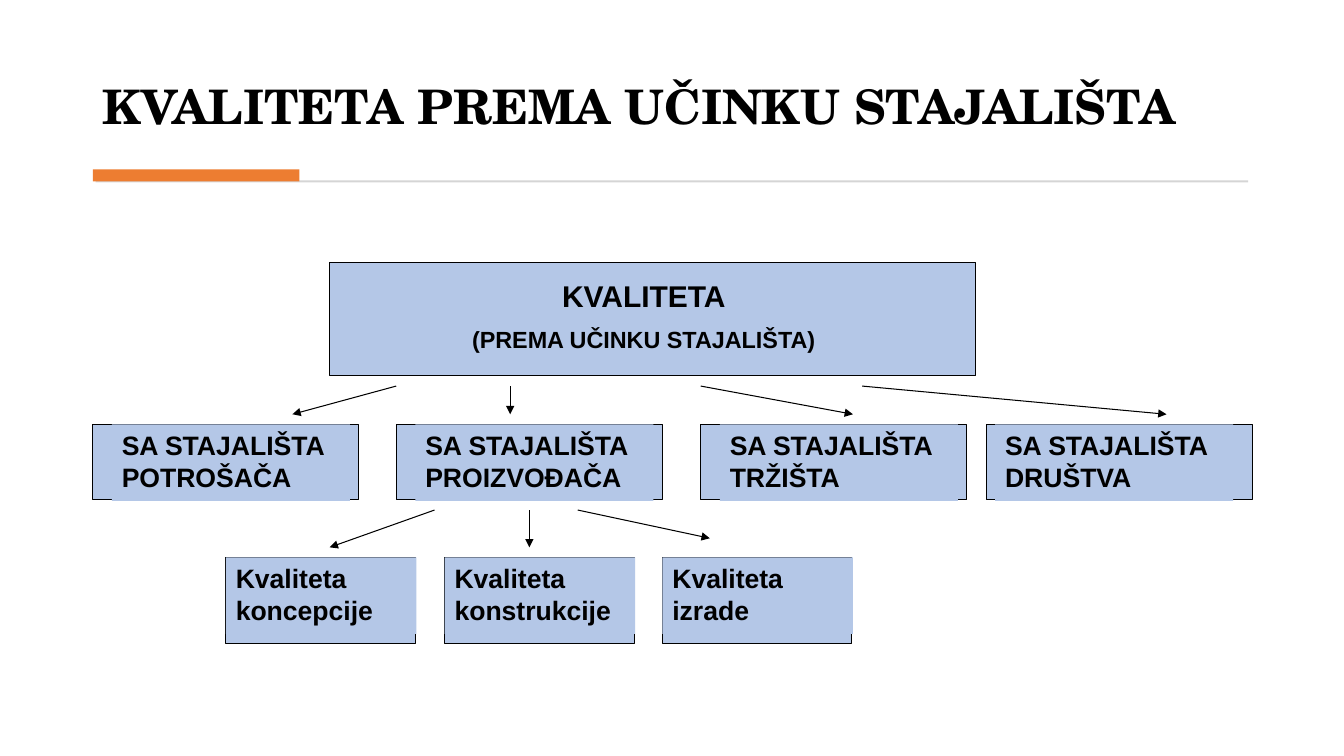
from lxml.etree import SubElement
from pptx import Presentation
from pptx.dml.color import RGBColor
from pptx.enum.shapes import MSO_CONNECTOR, MSO_SHAPE
from pptx.enum.text import MSO_ANCHOR, PP_ALIGN
from pptx.oxml.ns import qn
from pptx.util import Inches, Pt

COLORS = {"ink": "000000", "box": "B4C7E7", "rule": "D5D5D5", "accent": "ED7D31"}
VIEWS = [(0.92, 1.11, "POTROŠAČA"), (3.93, 4.12, "PROIZVOĐAČA"),
         (6.95, 7.14, "TRŽIŠTA"), (9.78, 9.87, "DRUŠTVA")]
KINDS = [(2.24, "koncepcije"), (4.41, "konstrukcije"), (6.57, "izrade")]
ARROWS = [(3.93, 3.83, 2.9, 4.11), (5.06, 3.83, 5.06, 4.11),
          (6.95, 3.83, 8.46, 4.11), (8.55, 3.83, 11.57, 4.11),
          (4.31, 5.06, 3.27, 5.43), (5.25, 5.06, 5.25, 5.43),
          (5.73, 5.06, 7.04, 5.34)]


def color(name):
    """Return the named colour."""
    return RGBColor.from_string(COLORS[name])


def add_box(slide, left, top, width, height, fill="box", edge=False):
    """Add a filled rectangle, with a thin outline if asked."""
    box = slide.shapes.add_shape(MSO_SHAPE.RECTANGLE, Inches(left), Inches(top),
                                 Inches(width), Inches(height))
    box.shadow.inherit = False
    box.fill.solid()
    box.fill.fore_color.rgb = color(fill)
    if edge:
        box.line.color.rgb = color("ink")
        box.line.width = Pt(0.75)
    else:
        box.line.fill.background()
    return box


def set_text(shape, lines, align=PP_ALIGN.LEFT, anchor=MSO_ANCHOR.TOP, face="Arial"):
    """Write bold lines, each given as text and size."""
    frame = shape.text_frame
    frame.word_wrap = True
    frame.vertical_anchor = anchor
    for i, (text, size) in enumerate(lines):
        para = frame.add_paragraph() if i else frame.paragraphs[0]
        para.text = text
        para.alignment = align
        if i:
            para.space_before = Pt(8.5)
        para.font.name = face
        para.font.size = Pt(size)
        para.font.bold = True
        para.font.color.rgb = color("ink")


def add_title(slide, text):
    """Add the slide title and the rule under it."""
    title = slide.shapes.add_textbox(Inches(0.92), Inches(0.28),
                                     Inches(11.49), Inches(1.11))
    set_text(title, [(text, 34)], anchor=MSO_ANCHOR.BOTTOM, face="TeX Gyre Schola")
    title.text_frame.paragraphs[0].line_spacing = 0.9
    add_box(slide, 0.95, 1.79, 11.43, 0.02, "rule")
    add_box(slide, 0.92, 1.68, 2.05, 0.12, "accent")


def add_arrow(slide, *ends):
    """Add a thin line with an arrowhead at its end."""
    arrow = slide.shapes.add_connector(MSO_CONNECTOR.STRAIGHT, *map(Inches, ends))
    arrow.line.color.rgb = color("ink")
    arrow.line.width = Pt(0.75)
    SubElement(arrow.line._get_or_add_ln(), qn("a:tailEnd"), type="triangle")
    SubElement(arrow._element.spPr, qn("a:effectLst"))


def add_label(slide, left, top, width, text):
    """Add a filled two-line label."""
    set_text(add_box(slide, left, top, width, 0.76), [(text, 19)])


def main():
    """Build the slide and save it."""
    deck = Presentation()
    deck.slide_width, deck.slide_height = Inches(13.33), Inches(7.5)
    slide = deck.slides.add_slide(deck.slide_layouts[6])
    add_title(slide, "KVALITETA PREMA UČINKU STAJALIŠTA")

    add_box(slide, 3.27, 2.6, 6.41, 1.13, edge=True)
    for left, _, _ in VIEWS:
        add_box(slide, left, 4.21, 2.64, 0.75, edge=True)
    for left, _ in KINDS:
        add_box(slide, left, 5.53, 1.88, 0.85, edge=True)
    for ends in ARROWS:
        add_arrow(slide, *ends)

    set_text(add_box(slide, 3.56, 2.7, 5.65, 0.9),
             [("KVALITETA", 21.4), ("(PREMA UČINKU STAJALIŠTA)", 16.7)],
             PP_ALIGN.CENTER)
    for _, left, name in VIEWS:
        add_label(slide, left, 4.21, 2.36, f"SA STAJALIŠTA {name}")
    for left, name in KINDS:
        add_label(slide, left, 5.53, 1.89, f"Kvaliteta {name}")
    deck.save("out.pptx")


if __name__ == "__main__":
    main()
